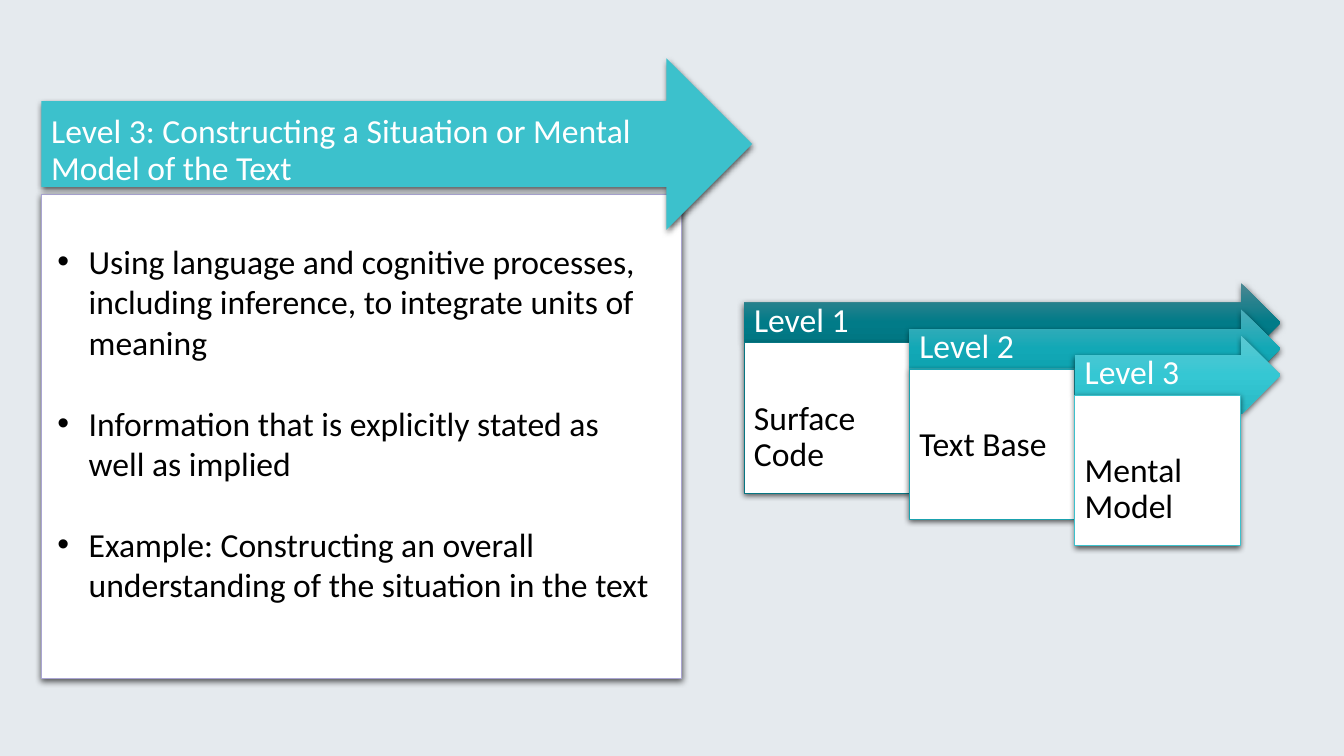
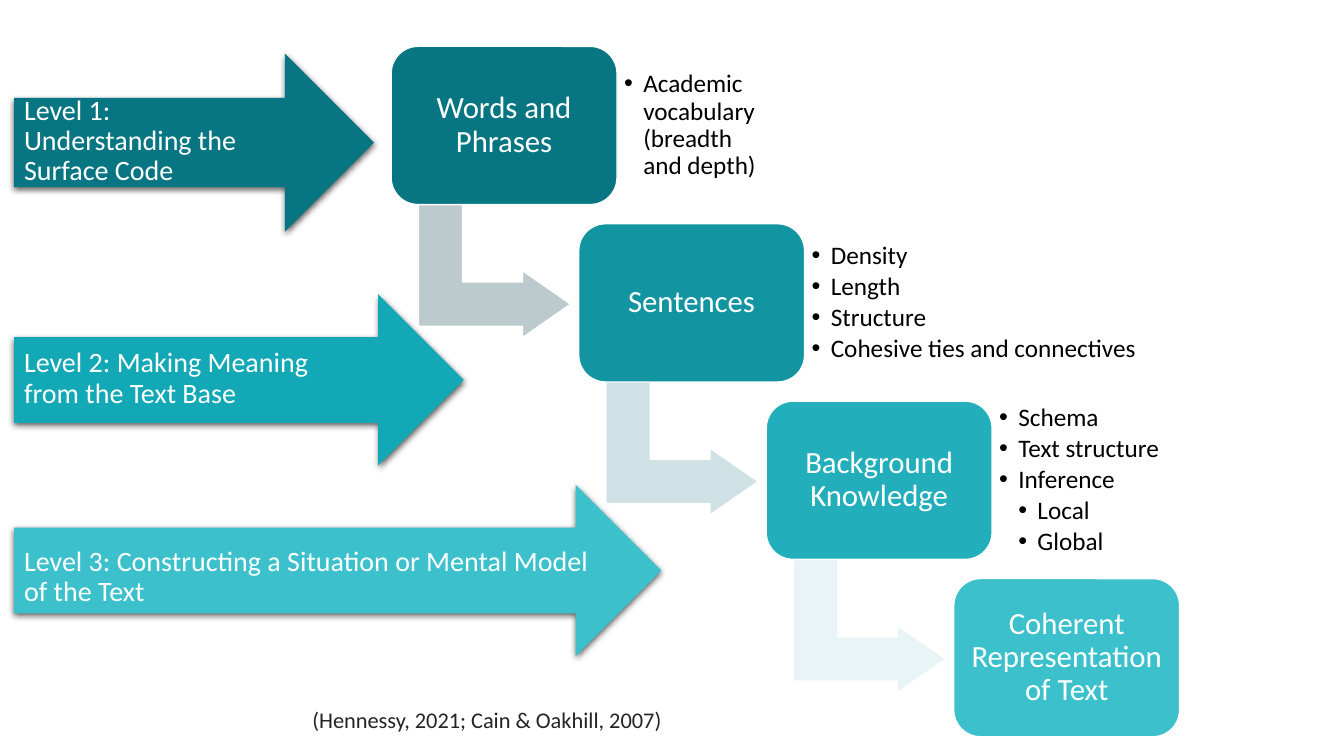
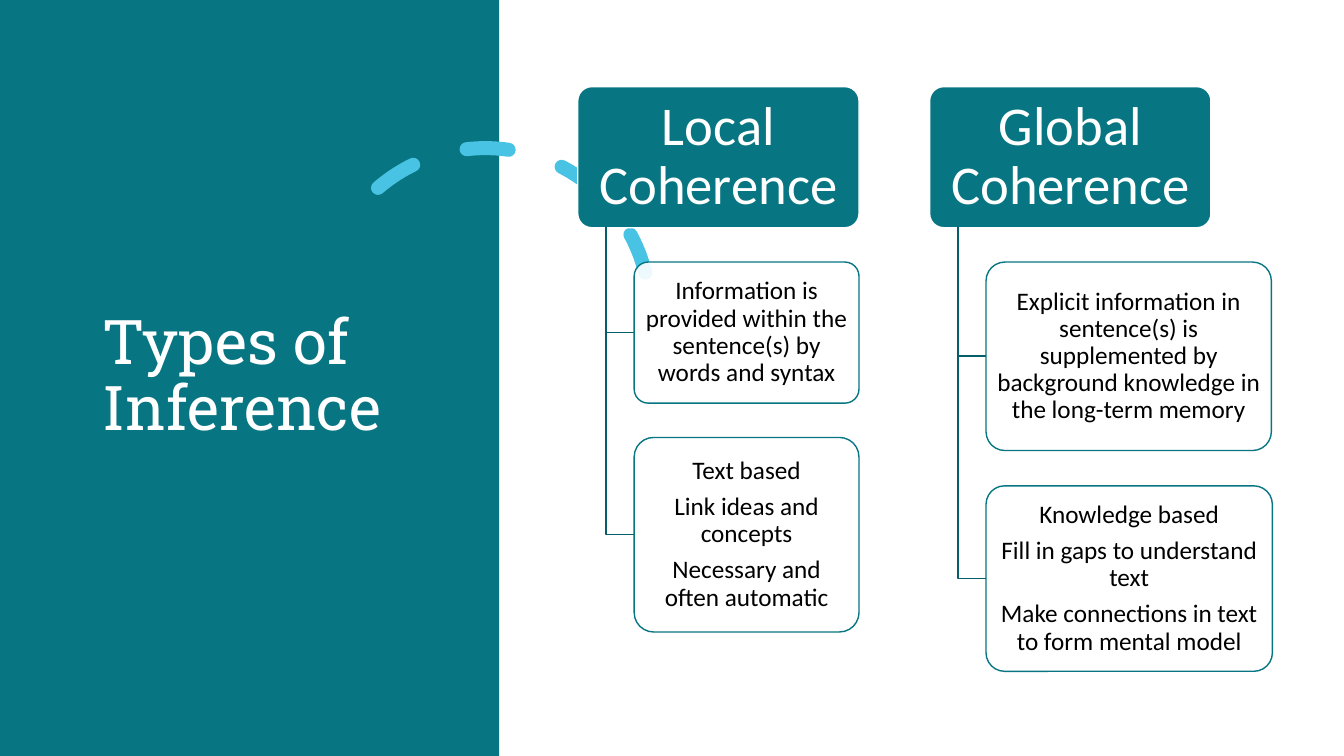
from dataclasses import dataclass
from typing import Optional, Sequence, Union

from lxml.etree import SubElement
from pptx import Presentation
from pptx.dml.color import RGBColor
from pptx.enum.dml import MSO_LINE
from pptx.enum.shapes import MSO_SHAPE
from pptx.enum.text import MSO_ANCHOR, PP_ALIGN
from pptx.oxml.ns import qn
from pptx.util import Emu, Pt

PX = 9144  # EMU in one px, 100 px to the inch
Box = tuple[int, int, int, int]
Fill = Union[str, Sequence[str], None]


@dataclass(frozen=True)
class Theme:
    body: str = "Calibri"
    head: str = "Roboto Slab"
    white: str = "FFFFFF"
    black: str = "000000"
    ink: str = "242424"
    pale: str = "E5EAEE"
    deep: str = "077682"
    mid: str = "12A8B6"
    light: str = "3CC1CC"
    wire: str = "065E68"
    sky: str = "48C3E3"
    edge: str = "AAA5D2"
    title: int = 44
    big: int = 39
    large: int = 24
    card: int = 22
    label: int = 20
    small: int = 18
    cite: int = 16


T = Theme()


@dataclass(frozen=True)
class Level:
    name: str
    text: str
    line: str
    grad: Sequence[str]


@dataclass(frozen=True)
class Banner:
    text: str
    box: Box
    fill: str
    size: int = T.label
    pad: Box = (10, 10, 28, 12)


@dataclass(frozen=True)
class Step:
    text: str
    fill: str
    bend: str = ""
    notes: Sequence[str] = ()
    wide: int = 0
    deep: int = 0  # how many of the last notes are nested


@dataclass(frozen=True)
class Leaf:
    lines: Sequence[str]
    top: int
    wide: int
    high: int


@dataclass(frozen=True)
class Branch:
    name: str
    left: int
    leaves: Sequence[Leaf]


LEVELS = (
    Level("Level 1", "Surface Code", T.deep, ("4B8792", "017B88", "006E7A")),
    Level("Level 2", "Text Base", "1AA2AF", ("4DAEBA", "12A8B6", "0A9BA8")),
    Level("Level 3", "Mental Model", T.light, ("5CC8D2", "35C7D3", "27B8C4")),
)
THIRD = "Level 3: Constructing a Situation or Mental Model of the Text"
GOALS = (
    "Using language and cognitive processes, including inference, to integrate units of meaning",
    "Information that is explicitly stated as well as implied",
    "Example: Constructing an overall understanding of the situation in the text",
)
BANNERS = (
    Banner("Level 1: Understanding the Surface Code", (14, 53, 357, 177), T.deep,
           pad=(10, 10, 45, 12)),
    Banner("Level 2: Making Meaning from the Text Base", (14, 292, 446, 170), T.mid,
           pad=(10, 10, 54, 12)),
    Banner(THIRD, (14, 481, 642, 170), T.light, pad=(10, 18, 8, 4)),
)
STEPS = (
    Step("Words and Phrases", T.deep, "BDCACD",
         ("Academic vocabulary (breadth and depth)",), 163),
    Step("Sentences", "1394A1", "D0E1E5",
         ("Density", "Length", "Structure", "Cohesive ties and connectives"), 352),
    Step("Background Knowledge", "22AEBB", "E9F4F6",
         ("Schema", "Text structure", "Inference", "Local", "Global"), 300, 2),
    Step("Coherent Representation of Text", T.light),
)
BRANCHES = (
    Branch("Local Coherence", 573, (
        Leaf(("Information is provided within the sentence(s) by words and syntax",),
             260, 223, 140),
        Leaf(("Text based", "Link ideas and concepts", "Necessary and often automatic"),
             434, 223, 193),
    )),
    Branch("Global Coherence", 922, (
        Leaf(("Explicit information in sentence(s) is supplemented by background "
              "knowledge in the long-term memory",), 260, 283, 187),
        Leaf(("Knowledge based", "Fill in gaps to understand text",
              "Make connections in text to form mental model"), 482, 284, 184),
    )),
)


def rgb(code: str) -> RGBColor:
    return RGBColor.from_string(code)


def place(box: Box) -> list[Emu]:
    return [Emu(v * PX) for v in box]


def blend(shape, stops: Sequence[str]) -> None:
    """Fill from top to bottom with evenly spaced stops."""
    shape.fill.gradient()
    shape.fill.gradient_angle = 270
    row = shape.fill._xPr.find(qn("a:gradFill")).find(qn("a:gsLst"))
    for old in list(row):
        row.remove(old)
    for i, code in enumerate(stops):
        stop = SubElement(row, qn("a:gs"), pos=str(100000 * i // (len(stops) - 1)))
        SubElement(stop, qn("a:srgbClr"), val=code)


def shade(shape) -> None:
    """Add the soft drop shadow of arrows and panels."""
    fx = shape._element.spPr.find(qn("a:effectLst"))
    drop = SubElement(fx, qn("a:outerShdw"), blurRad=str(Pt(4.5)), dist=str(Pt(1.5)),
                      dir="5400000", algn="ctr", rotWithShape="0")
    tone = SubElement(drop, qn("a:srgbClr"), val=T.black)
    SubElement(tone, qn("a:alpha"), val="63000")


def style(shape, fill: Fill = None, line: Optional[str] = None, width: float = 1,
          alpha: int = 100, shadow: bool = False) -> None:
    shape.shadow.inherit = False
    if fill is None:
        shape.fill.background()
    elif isinstance(fill, str):
        shape.fill.solid()
        shape.fill.fore_color.rgb = rgb(fill)
        if alpha < 100:
            tone = shape.fill._xPr.find(qn("a:solidFill"))[0]
            SubElement(tone, qn("a:alpha"), val=str(alpha * 1000))
    else:
        blend(shape, fill)
    if line:
        shape.line.color.rgb = rgb(line)
        shape.line.width = Pt(width)
    else:
        shape.line.fill.background()
    if shadow:
        shade(shape)


def form(slide, kind: MSO_SHAPE, box: Box, fill: Fill = None, adj: Sequence[float] = (),
         turn: float = 0, **look):
    shape = slide.shapes.add_shape(kind, *place(box))
    for i, value in enumerate(adj):
        shape.adjustments[i] = value
    shape.rotation = turn
    style(shape, fill, **look)
    return shape


def write(shape, text: Union[str, Sequence[str]], size: int, color: str = T.black,
          font: str = T.body, align: PP_ALIGN = PP_ALIGN.LEFT,
          anchor: MSO_ANCHOR = MSO_ANCHOR.MIDDLE, pad: Box = (10, 5, 10, 5),
          lead: float = 0.9, gap: float = 0, bullet: int = 0, deep: int = 0) -> None:
    """Set text; gap is points between paragraphs, bullet the hanging indent in px."""
    frame = shape.text_frame
    frame.word_wrap = True
    frame.vertical_anchor = anchor
    (frame.margin_left, frame.margin_top,
     frame.margin_right, frame.margin_bottom) = place(pad)
    lines = [text] if isinstance(text, str) else text
    for i, line in enumerate(lines):
        para = frame.paragraphs[0] if i == 0 else frame.add_paragraph()
        if bullet:
            depth = 2 if i >= len(lines) - deep else 1
            props = para._p.get_or_add_pPr()
            props.set("marL", str(bullet * depth * PX))
            props.set("indent", str(-bullet * PX))
            SubElement(props, qn("a:buFont"), typeface="Arial")
            SubElement(props, qn("a:buChar"), char="•")
        para.alignment = align
        para.line_spacing = lead
        if i < len(lines) - 1:
            para.space_after = Pt(gap)
        run = para.add_run()
        run.text = line
        run.font.name = font
        run.font.size = Pt(size)
        run.font.color.rgb = rgb(color)


def label(slide, box: Box, text: Union[str, Sequence[str]], size: int, **look) -> None:
    write(slide.shapes.add_textbox(*place(box)), text, size, **look)


def arrow(slide, text: str, box: Box, fill: Fill, size: int, pad: Box) -> None:
    shape = form(slide, MSO_SHAPE.RIGHT_ARROW, box, fill, adj=(0.5, 0.5), shadow=True)
    write(shape, text, size, color=T.white, pad=pad)


def banner(slide, item: Banner) -> None:
    arrow(slide, item.text, item.box, item.fill, item.size, item.pad)


def start(deck, back: str):
    slide = deck.slides.add_slide(deck.slide_layouts[6])
    slide.background.fill.solid()
    slide.background.fill.fore_color.rgb = rgb(back)
    return slide


def model(deck) -> None:
    slide = start(deck, T.pale)
    # Panel with bullets
    panel = form(slide, MSO_SHAPE.RECTANGLE, (41, 193, 635, 480), T.white,
                 line=T.edge, width=0.5, shadow=True)
    write(panel, GOALS, T.large, anchor=MSO_ANCHOR.TOP, pad=(16, 46, 19, 5),
          lead=1, gap=29, bullet=31)
    # Stack of three levels, all arrows ending at one right edge
    wide, drop, right = 164, 26, 1270
    for i, item in enumerate(LEVELS):
        left = 738 + wide * i
        arrow(slide, item.name, (left, 281 + drop * i, right - left, 78), item.grad,
              T.large, (10, 10, 28, 12))
        card = form(slide, MSO_SHAPE.RECTANGLE, (left, 340 + drop * i, wide, 149),
                    T.white, line=item.line, width=0.5, shadow=True)
        write(card, item.text, T.large, anchor=MSO_ANCHOR.TOP, pad=(10, 58, 10, 10))
    # Heading arrow
    banner(slide, Banner(THIRD, (41, 58, 705, 170), T.light, T.large, (10, 18, 11, 4)))


def stairs(deck) -> None:
    slide = start(deck, T.white)
    for item in BANNERS:
        banner(slide, item)
    # Staircase of steps
    for i, step in enumerate(STEPS):
        dx, dy = 186 * i, 176 * i
        if step.bend:
            form(slide, MSO_SHAPE.BENT_UP_ARROW, (424 + dx, 193 + dy, 133, 151),
                 step.bend, adj=(0.33, 0.25, 0.36), turn=90, line=T.white)
        card = form(slide, MSO_SHAPE.ROUNDED_RECTANGLE, (388 + dx, 46 + dy, 224, 157),
                    step.fill, adj=(0.17,), line=T.white)
        write(card, step.text, T.card, color=T.white, align=PP_ALIGN.CENTER,
              pad=(9, 9, 9, 9))
        if step.notes:
            label(slide, (612 + dx, 61 + dy, step.wide, 127), step.notes, T.small,
                  pad=(7, 7, 7, 7), gap=2.7, bullet=19, deep=step.deep)
    # Citation
    label(slide, (300, 696, 567, 37), "(Hennessy, 2021; Cain & Oakhill, 2007)", T.cite,
          color=T.ink, anchor=MSO_ANCHOR.TOP, lead=1)


def types(deck) -> None:
    slide = start(deck, T.white)
    # Side band, dashed arc and title
    form(slide, MSO_SHAPE.RECTANGLE, (0, 0, 495, 750), T.deep)
    arc = form(slide, MSO_SHAPE.ARC, (318, 147, 327, 327), adj=(146.13, 0), turn=345.8,
               line=T.sky, width=10)
    arc.line.dash_style = MSO_LINE.DASH
    arc.line._get_or_add_ln().set("cap", "rnd")
    label(slide, (92, 70, 323, 609), "Types of Inference", T.title, color=T.white,
          font=T.head)
    # Two trees
    inset = 28
    for tree in BRANCHES:
        root = form(slide, MSO_SHAPE.ROUNDED_RECTANGLE, (tree.left, 86, 279, 140),
                    T.deep, adj=(0.1,), line=T.white)
        write(root, tree.name, T.big, color=T.white, align=PP_ALIGN.CENTER,
              pad=(8, 5, 8, 5))
        stem = tree.left + inset
        for leaf in tree.leaves:
            mid = leaf.top + leaf.high // 2
            pen = slide.shapes.build_freeform(stem, 225, scale=PX)
            pen.add_line_segments([(stem, mid), (stem + inset, mid)], close=False)
            style(pen.convert_to_shape(), line=T.wire)
            card = form(slide, MSO_SHAPE.ROUNDED_RECTANGLE,
                        (stem + inset, leaf.top, leaf.wide, leaf.high), T.white,
                        adj=(0.1,), line=T.deep, alpha=90)
            write(card, leaf.lines, T.small, align=PP_ALIGN.CENTER, pad=(4, 3, 4, 3),
                  gap=6.3)


def main() -> None:
    deck = Presentation()
    deck.slide_width, deck.slide_height = Emu(1333 * PX), Emu(750 * PX)
    for build in (model, stairs, types):
        build(deck)
    deck.save("out.pptx")


if __name__ == "__main__":
    main()
